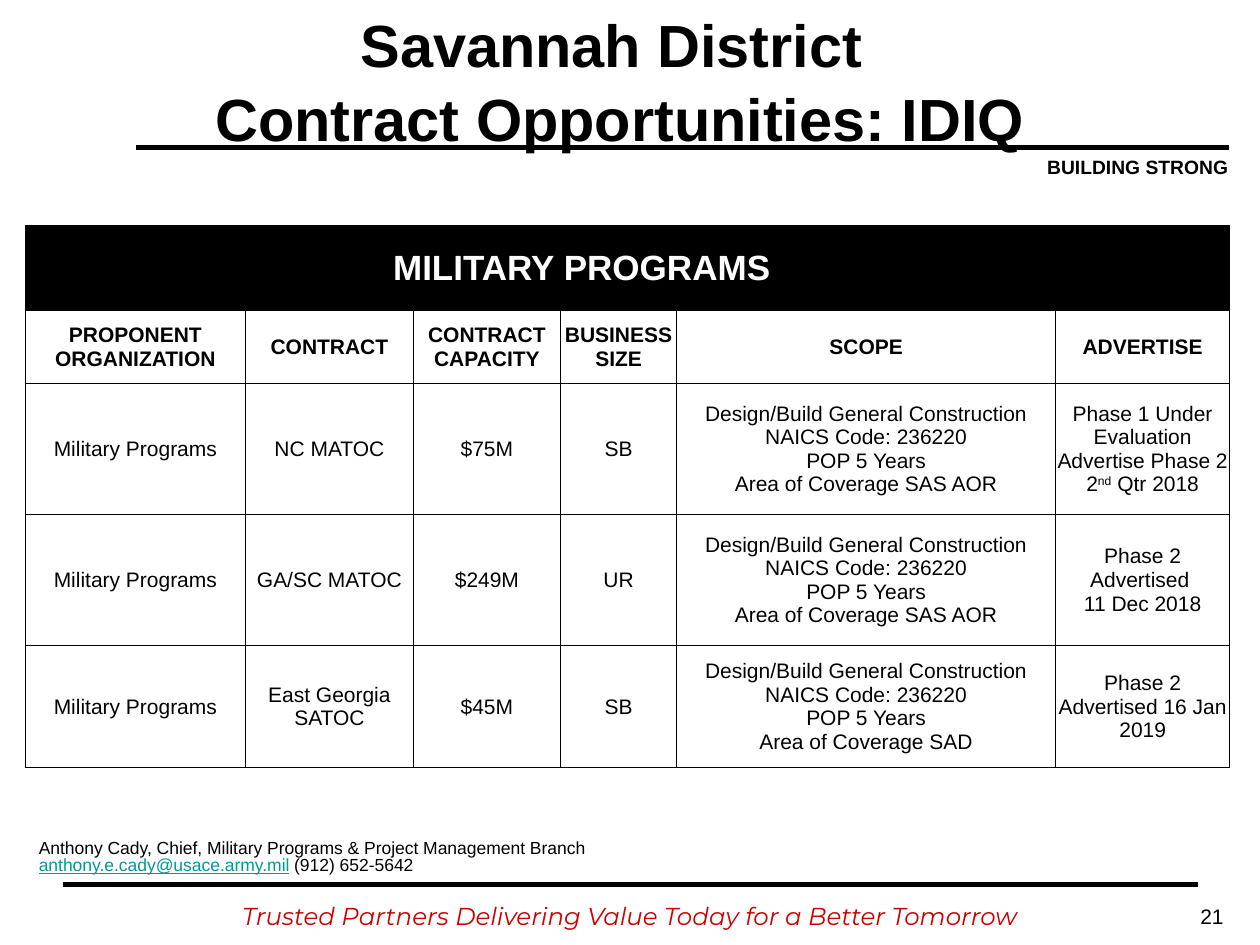
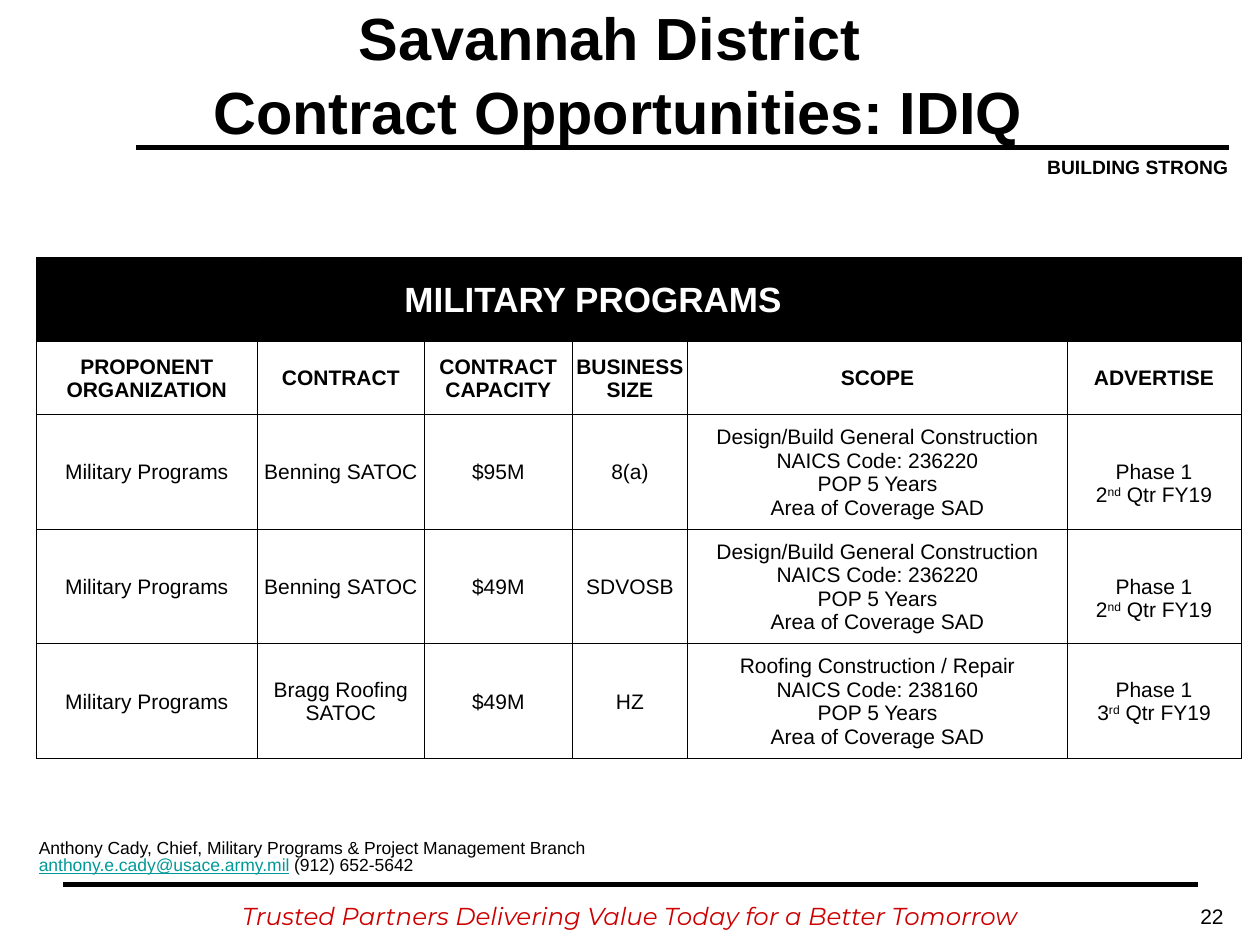
from lxml import etree
from pptx import Presentation
from pptx.dml.color import RGBColor
from pptx.enum import shapes, text
from pptx.oxml.ns import qn
from pptx.util import Inches, Pt

BLACK, WHITE, RED, TEAL = "000000", "FFFFFF", "CC0000", "009999"
CENTER, RIGHT = text.PP_ALIGN.CENTER, text.PP_ALIGN.RIGHT
MIDDLE = text.MSO_ANCHOR.MIDDLE

TITLE = ["Savannah District ", "Contract Opportunities: IDIQ"]
MOTTO = "BUILDING STRONG"
TAGLINE = "Trusted Partners Delivering Value Today for a Better Tomorrow"
CONTACT = [
    "Anthony Cady, Chief, Military Programs & Project Management Branch",
    [("anthony.e.cady@usace.army.mil", {"color": TEAL, "underline": True}),
     " (912) 652-5642"],
]
RULES = [(1.08, 9.75, 1.17), (0.5, 9.51, 7.02)]

PROGRAM = "MILITARY PROGRAMS"
HEADINGS = ["PROPONENT ORGANIZATION", "CONTRACT", "CONTRACT CAPACITY",
            "BUSINESS SIZE", "SCOPE", "ADVERTISE"]
COLUMNS = [1.75, 1.33, 1.17, 0.92, 3.01, 1.38]
HEADER_ROWS = [0.67, 0.58]
PROGRAM_INDENT = 1.17
LOWERED = 0.19
DESIGN_BUILD = ("Design/Build General Construction", "236220")
ROOFING = ("Roofing Construction / Repair", "238160")


def quarter(before, ordinal, after):
    return [before, (ordinal, {"sup": True}), after]


SECOND_QUARTER = ["Phase 1", quarter("2", "nd", " Qtr FY19")]

SLIDES = [
    {"number": "21", "title": (0.42, 0.39, 9, 0.5), "table": (0.2, 1.79),
     "heights": [1.04, 1.04, 0.97], "lowered": [],
     "contracts": [
         ("NC MATOC", "$75M", "SB", DESIGN_BUILD, "SAS AOR",
          ["Phase 1 Under Evaluation",
           quarter("Advertise Phase 2 2", "nd", " Qtr 2018")]),
         ("GA/SC MATOC", "$249M", "UR", DESIGN_BUILD, "SAS AOR",
          ["Phase 2 Advertised ", "11 Dec 2018"]),
         ("East Georgia SATOC", "$45M", "SB", DESIGN_BUILD, "SAD",
          ["Phase 2 Advertised 16 Jan 2019"]),
     ]},
    {"number": "22", "title": (1.08, 0.15, 7.65, 0.87), "table": (0.29, 2.04),
     "heights": [0.91] * 3, "lowered": [0, 1],
     "contracts": [
         ("Benning SATOC", "$95M", "8(a)", DESIGN_BUILD, "SAD", SECOND_QUARTER),
         ("Benning SATOC", "$49M", "SDVOSB", DESIGN_BUILD, "SAD", SECOND_QUARTER),
         ("Bragg Roofing SATOC", "$49M", "HZ", ROOFING, "SAD",
          ["Phase 1", quarter("3", "rd", " Qtr FY19")]),
     ]},
]


def rgb(value):
    return RGBColor.from_string(value)


def write(tf, lines, size=12, font="Arial", color=BLACK, bold=False,
          italic=False, align=None, spacing=None, gap=0):
    lines = [lines] if isinstance(lines, str) else lines
    for i, line in enumerate(lines):
        p = tf.add_paragraph() if i else tf.paragraphs[0]
        p.alignment = align
        if spacing:
            p.line_spacing = spacing
        if i and gap:
            p.space_before = Pt(gap)
        for part in [line] if isinstance(line, str) else line:
            content, extra = (part, {}) if isinstance(part, str) else part
            r = p.add_run()
            r.text = content
            f = r.font
            f.name, f.size, f.bold, f.italic = font, Pt(size), bold, italic
            f.color.rgb = rgb(extra.get("color", color))
            f.underline = extra.get("underline", False)
            if extra.get("sup"):
                r._r.get_or_add_rPr().set("baseline", "30000")


def add_text(s, box, lines, inset=True, **fmt):
    tf = s.shapes.add_textbox(*map(Inches, box)).text_frame
    tf.word_wrap = True
    if not inset:
        tf.margin_left = tf.margin_right = tf.margin_top = tf.margin_bottom = 0
    write(tf, lines, **fmt)


def add_rule(s, left, right, y):
    line = s.shapes.add_connector(shapes.MSO_CONNECTOR.STRAIGHT, Inches(left),
                                  Inches(y), Inches(right), Inches(y))
    line.line.color.rgb = rgb(BLACK)
    line.line.width = Pt(3)
    etree.SubElement(line._element.spPr, qn("a:effectLst"))


def add_frame(s, number):
    add_text(s, (8.31, 1.23, 1.44, 0.19), MOTTO, inset=False, size=11,
             bold=True, align=RIGHT)
    add_text(s, (0, 7.16, 10, 0.22), TAGLINE, inset=False, size=14,
             font="Montserrat", color=RED, italic=True, align=CENTER,
             spacing=Pt(16))
    for rule in RULES:
        add_rule(s, *rule)
    add_text(s, (7.48, 7.12, 2.33, 0.52), number, align=RIGHT)
    add_text(s, (0.21, 6.63, 9.54, 0.37), CONTACT, size=10, spacing=0.8)


def add_title(s, box):
    sp = s.shapes.title
    sp.left, sp.top, sp.width, sp.height = map(Inches, box)
    tf = sp.text_frame
    tf.word_wrap = True
    tf.auto_size = text.MSO_AUTO_SIZE.NONE
    tf.vertical_anchor = MIDDLE
    write(tf, TITLE, size=34, bold=True, align=CENTER, gap=1.5)


def style_cell(cell, fill=None):
    cell.vertical_anchor = MIDDLE
    cell.margin_left = cell.margin_right = cell.margin_top = Inches(0.01)
    cell.margin_bottom = 0
    tcPr = cell._tc.get_or_add_tcPr()
    for side in ("lnL", "lnR", "lnT", "lnB"):
        ln = etree.SubElement(tcPr, qn(f"a:{side}"), w=str(Pt(0.5)))
        solid = etree.SubElement(ln, qn("a:solidFill"))
        etree.SubElement(solid, qn("a:srgbClr"), val=BLACK)
    if fill:
        cell.fill.solid()
        cell.fill.fore_color.rgb = rgb(fill)
    else:
        cell.fill.background()


def contract_row(contract, capacity, size, work, coverage, advertise):
    name, naics = work
    scope = [name, f"NAICS Code: {naics}", "POP 5 Years",
             f"Area of Coverage {coverage}"]
    return ["Military Programs", contract, capacity, size, scope, advertise]


def add_contracts(s, data):
    heights = HEADER_ROWS + data["heights"]
    box = (*data["table"], sum(COLUMNS), sum(heights))
    table = s.shapes.add_table(len(heights), len(COLUMNS),
                               *map(Inches, box)).table
    table.first_row = table.horz_banding = False
    for column, width in zip(table.columns, COLUMNS):
        column.width = Inches(width)
    for row, height in zip(table.rows, heights):
        row.height = Inches(height)

    for cell in table.rows[0].cells:
        style_cell(cell, BLACK)
    program = table.cell(0, 1)
    program.merge(table.cell(0, len(COLUMNS) - 1))
    program.margin_left = Inches(PROGRAM_INDENT)
    write(program.text_frame, PROGRAM, size=20, color=WHITE, bold=True)

    rows = [HEADINGS] + [contract_row(*c) for c in data["contracts"]]
    for i, values in enumerate(rows, 1):
        for j, value in enumerate(values):
            cell = table.cell(i, j)
            style_cell(cell)
            write(cell.text_frame, value, bold=i == 1, align=CENTER)
    for i in data["lowered"]:
        table.cell(i + len(HEADER_ROWS), len(COLUMNS) - 1).margin_top = Inches(LOWERED)


def main():
    prs = Presentation()
    prs.slide_width, prs.slide_height = Inches(10), Inches(7.5)
    for data in SLIDES:
        s = prs.slides.add_slide(prs.slide_layouts[5])
        add_frame(s, data["number"])
        add_contracts(s, data)
        add_title(s, data["title"])
    prs.save("out.pptx")


if __name__ == "__main__":
    main()
